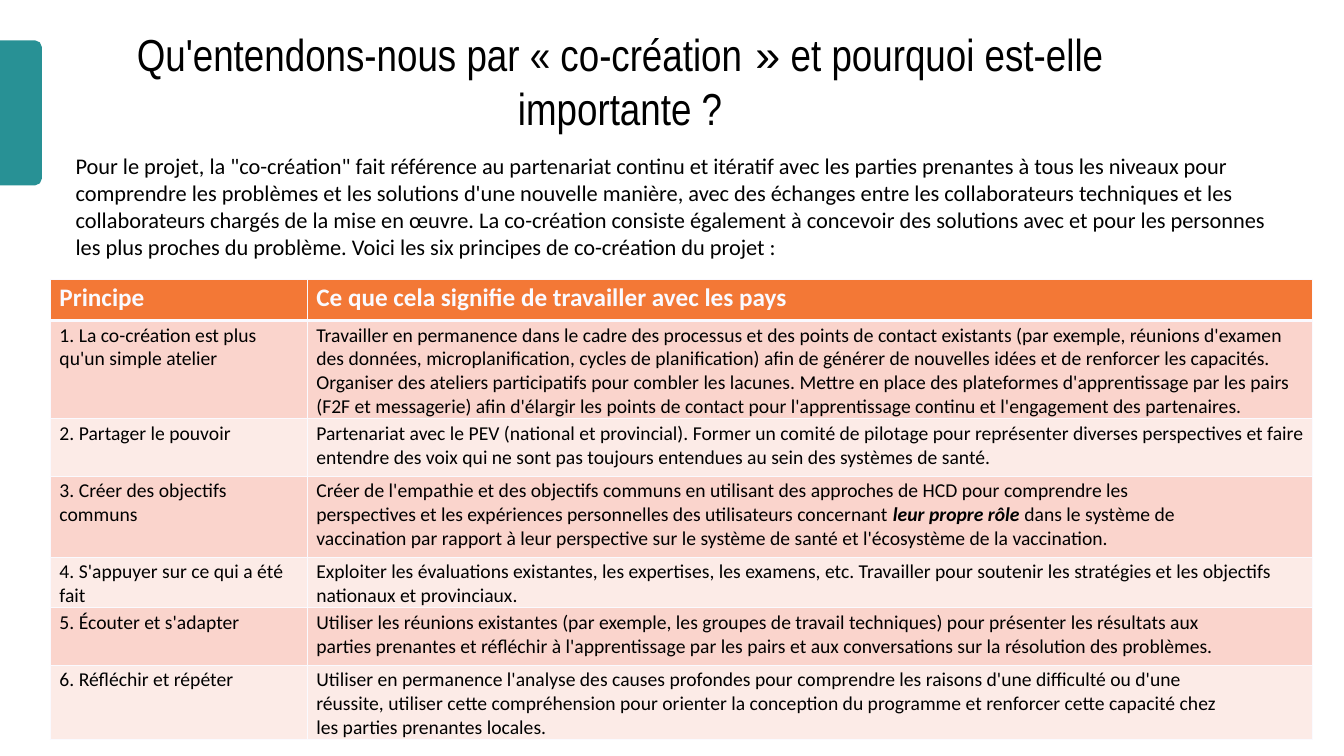
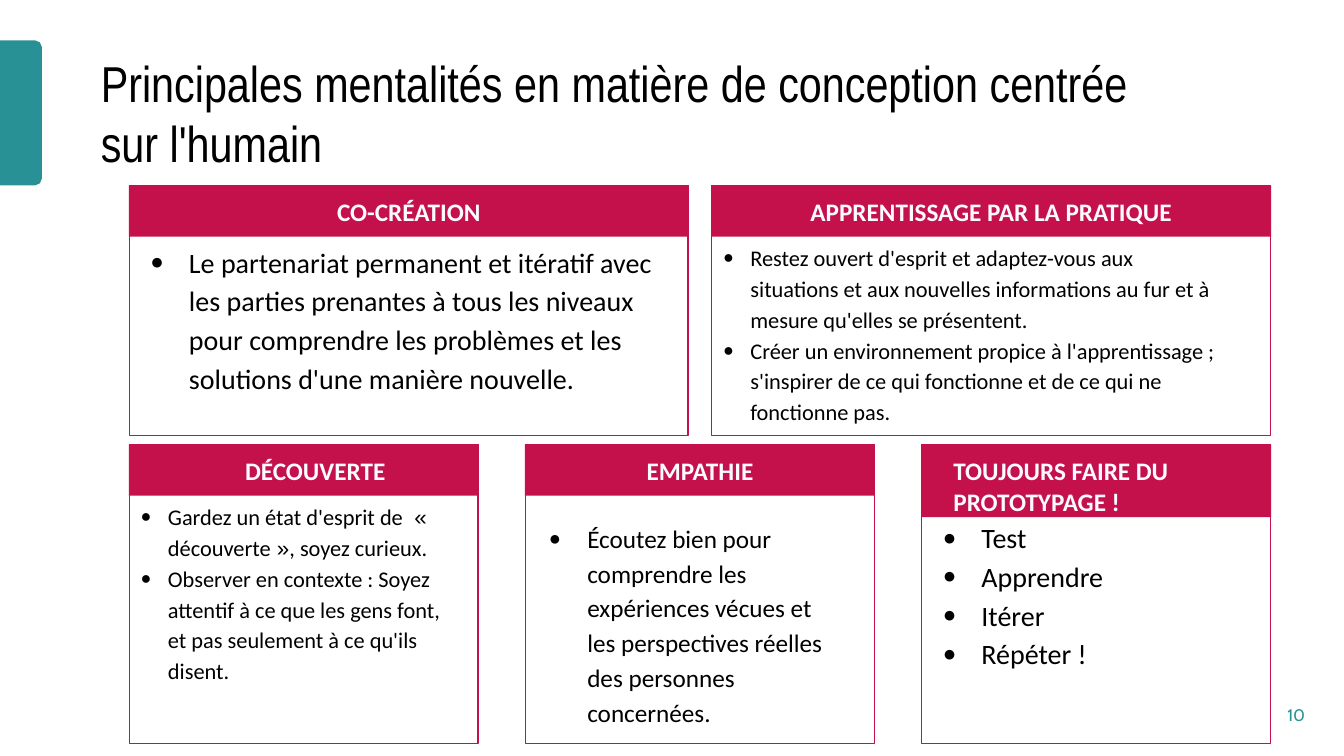
from copy import deepcopy

from lxml import etree
from pptx import Presentation
from pptx.dml.color import RGBColor
from pptx.enum import shapes, text
from pptx.oxml.ns import qn
from pptx.util import Pt

COLORS = {
    "ink": "000000",
    "paper": "FAFAFF",
    "teal": "289195",
    "crimson": "C4114C",
    "orange": "F37836",
    "rose": "FAD4CC",
    "blush": "FCEBE7",
}
LEFT, CENTER = text.PP_ALIGN.LEFT, text.PP_ALIGN.CENTER

PRINCIPLES = [
    ("1. La co-création est plus qu'un simple atelier",
     "Travailler en permanence dans le cadre des processus et des points de contact existants "
     "(par exemple, réunions d'examen des données, microplanification, cycles de planification) "
     "afin de générer de nouvelles idées et de renforcer les capacités. Organiser des ateliers "
     "participatifs pour combler les lacunes. Mettre en place des plateformes d'apprentissage par "
     "les pairs (F2F et messagerie) afin d'élargir les points de contact pour l'apprentissage "
     "continu et l'engagement des partenaires.", 58, 0),
    ("2. Partager le pouvoir",
     "Partenariat avec le PEV (national et provincial). Former un comité de pilotage pour "
     "représenter diverses perspectives et faire entendre des voix qui ne sont pas toujours "
     "entendues au sein des systèmes de santé.", 41, 0),
    ("3. Créer des objectifs communs",
     [("Créer de l'empathie et des objectifs communs en utilisant des approches de HCD pour "
       "comprendre les perspectives et les expériences personnelles des utilisateurs concernant ", {}),
      ("leur propre rôle ", {"bold": True, "italic": True}),
      ("dans le système de vaccination par rapport à leur perspective sur le système de santé et "
       "l'écosystème de la vaccination.", {})], 58, 57),
    ("4. S'appuyer sur ce qui a été fait",
     "Exploiter les évaluations existantes, les expertises, les examens, etc. Travailler pour "
     "soutenir les stratégies et les objectifs nationaux et provinciaux.", 30, 0),
    ("5. Écouter et s'adapter",
     "Utiliser les réunions existantes (par exemple, les groupes de travail techniques) pour "
     "présenter les résultats aux parties prenantes et réfléchir à l'apprentissage par les pairs "
     "et aux conversations sur la résolution des problèmes.", 41, 57),
    ("6. Réfléchir et répéter",
     "Utiliser en permanence l'analyse des causes profondes pour comprendre les raisons d'une "
     "difficulté ou d'une réussite, utiliser cette compréhension pour orienter la conception du "
     "programme et renforcer cette capacité chez les parties prenantes locales.", 41, 57),
]

SMALL_LIST = {"size": 16, "indent": 27.5, "hang": 19.5, "first": 1, "line": 1.15}
LARGE_LIST = {"size": 20, "indent": 42.5, "hang": 27.5, "first": 1, "line": 1.15}

MINDSETS = [
    [
        {"name": "CO-CRÉATION", "right": 10, "format": LARGE_LIST,
         "points": ["Le partenariat permanent et itératif avec les parties prenantes à tous les "
                    "niveaux pour comprendre les problèmes et les solutions d'une manière nouvelle."]},
        {"name": "APPRENTISSAGE PAR LA PRATIQUE", "right": 38, "format": SMALL_LIST,
         "points": ["Restez ouvert d'esprit et adaptez-vous aux situations et aux nouvelles "
                    "informations au fur et à mesure qu'elles se présentent.",
                    "Créer un environnement propice à l'apprentissage ; s'inspirer de ce qui "
                    "fonctionne et de ce qui ne fonctionne pas."]},
    ],
    [
        {"name": "DÉCOUVERTE", "name_format": {"align": LEFT, "indent": 83},
         "right": 21, "format": SMALL_LIST,
         "points": [[("Gardez un état d'esprit de ", {}), (" « ", {"font": "Arial"}),
                     ("découverte", {}), (" »", {"font": "Arial"}), (", soyez curieux.", {})],
                    "Observer en contexte : Soyez attentif à ce que les gens font, et pas "
                    "seulement à ce qu'ils disent."]},
        {"name": "EMPATHIE", "right": 31, "list_at": (2, 52),
         "format": {**LARGE_LIST, "size": 18},
         "points": ["Écoutez bien pour comprendre les expériences vécues et les perspectives "
                    "réelles des personnes concernées."]},
        {"name": "TOUJOURS FAIRE DU PROTOTYPAGE !", "name_format": {"align": LEFT, "indent": 23},
         "band": 52, "right": 0, "list_at": (0.5, 50.5), "inset": 4,
         "format": {**LARGE_LIST, "line": 1, "first": 4.6, "before": 3.6},
         "points": ["Test", "Apprendre", "Itérer", "Répéter !"]},
    ],
]


def rgb(name):
    return RGBColor.from_string(COLORS[name])


def write(frame, paragraphs, size=16, font="Calibri", color="ink", bold=False, italic=False,
          align=LEFT, indent=0, hang=0, first=0, before=0, line=1, margins=(0, 1, 0, 0)):
    frame.word_wrap = True
    frame.auto_size = text.MSO_AUTO_SIZE.NONE
    frame.vertical_anchor = text.MSO_ANCHOR.TOP
    (frame.margin_left, frame.margin_top,
     frame.margin_right, frame.margin_bottom) = map(Pt, margins)
    fill_paragraphs(frame, paragraphs, size=size, font=font, color=color, bold=bold,
                    italic=italic, align=align, indent=indent, hang=hang, first=first,
                    before=before, line=line)


def fill_paragraphs(frame, paragraphs, align, indent, hang, first, before, line, **look):
    for number, content in enumerate(paragraphs):
        paragraph = frame.add_paragraph() if number else frame.paragraphs[0]
        paragraph.alignment = align
        paragraph.space_before = Pt(before if number else first)
        paragraph.space_after = Pt(0)
        paragraph.line_spacing = line
        props = paragraph._p.get_or_add_pPr()
        props.set("marL", str(Pt(indent)))
        props.set("indent", str(-Pt(hang)))
        if hang:
            etree.SubElement(props, qn("a:buSzPct")).set("val", "80000")
            etree.SubElement(props, qn("a:buChar")).set("char", "●")
        else:
            etree.SubElement(props, qn("a:buNone"))
        for words, changes in [(content, {})] if isinstance(content, str) else content:
            style = {**look, **changes}
            run = paragraph.add_run()
            run.text = words
            run.font.size = Pt(style["size"])
            run.font.name = style["font"]
            run.font.bold = style["bold"]
            run.font.italic = style["italic"]
            run.font.color.rgb = rgb(style["color"])


def place(shape, left, top, width, height):
    shape.left, shape.top, shape.width, shape.height = map(Pt, (left, top, width, height))
    return shape


def add_title(slide, content, top, size, **extra):
    title = place(slide.shapes.title, 54, top, 778, 45)
    write(title.text_frame, [content], size=size, font="Arial Narrow", first=1, **extra)


def add_master_tab(deck, slide, top=28.8, width=30, height=103.7):
    bottom = top + height
    outline = slide.shapes.build_freeform(0, Pt(top), scale=1.0)
    corners = [(width - 5, top), (width - 1.5, top + 1.5), (width, top + 5),
               (width, bottom - 5), (width - 1.5, bottom - 1.5), (width - 5, bottom), (0, bottom)]
    outline.add_line_segments([(Pt(x), Pt(y)) for x, y in corners], close=True)
    tab = outline.convert_to_shape()
    tab.shadow.inherit = False
    tab.fill.solid()
    tab.fill.fore_color.rgb = rgb("teal")
    tab.line.fill.background()
    tab.element.nvSpPr.cNvPr.set("id", "90")
    deck.slide_master.element.cSld.spTree.insert(2, tab.element)


def add_list_slots(layout, extra):
    source = next(p for p in layout.placeholders if p.placeholder_format.idx == 1)
    for number in range(extra):
        slot = deepcopy(source.element)
        slot.nvSpPr.cNvPr.set("id", str(50 + number))
        slot.nvSpPr.nvPr.find(qn("p:ph")).set("idx", str(20 + number))
        layout.element.cSld.spTree.append(slot)


def style_cell(cell, content, fill, bottom=1, top=1, right=0, **look):
    cell.fill.solid()
    cell.fill.fore_color.rgb = rgb(fill)
    cell.margin_left = cell.margin_bottom = 0
    cell.margin_top, cell.margin_right = Pt(2), Pt(right)
    cell.vertical_anchor = text.MSO_ANCHOR.TOP
    options = {"size": 14, "font": "Calibri", "color": "ink", "bold": False, "italic": False,
               "align": LEFT, "indent": 6.5, "hang": 0, "first": 2.4, "before": 0, "line": 1}
    fill_paragraphs(cell.text_frame, [content], **{**options, **look})
    props = cell._tc.get_or_add_tcPr()
    for position, (side, weight) in enumerate(zip("LRTB", (1, 1, top, bottom))):
        border = etree.Element(qn("a:ln" + side), w=str(Pt(weight)))
        paint = etree.SubElement(border, qn("a:solidFill"))
        etree.SubElement(paint, qn("a:srgbClr")).set("val", COLORS["paper"])
        props.insert(position, border)


def add_principles(slide, left, top, widths, header_height):
    heights = [header_height] + [row[2] for row in PRINCIPLES]
    table = slide.shapes.add_table(len(heights), 2, Pt(left), Pt(top),
                                   Pt(sum(widths)), Pt(sum(heights))).table
    for column, width in zip(table.columns, widths):
        column.width = Pt(width)
    for row, height in zip(table.rows, heights):
        row.height = Pt(height)
    for column, heading in enumerate(("Principe", "Ce que cela signifie de travailler avec les pays")):
        style_cell(table.cell(0, column), heading, "orange", bottom=3,
                   size=18, color="paper", bold=True)
    for number, (principle, meaning, _, right) in enumerate(PRINCIPLES, 1):
        fill = "rose" if number % 2 else "blush"
        top_weight = 3 if number == 1 else 1
        style_cell(table.cell(number, 0), principle, fill, top=top_weight, right=12)
        style_cell(table.cell(number, 1), meaning, fill, top=top_weight, right=right)


def add_box(slide, left, top, width, height, fill=None, line=None):
    box = slide.shapes.add_shape(shapes.MSO_SHAPE.RECTANGLE, *map(Pt, (left, top, width, height)))
    box.shadow.inherit = False
    if fill:
        box.fill.solid()
        box.fill.fore_color.rgb = rgb(fill)
    else:
        box.fill.background()
    if line:
        box.line.color.rgb = rgb(line)
        box.line.width = Pt(0.75)
    else:
        box.line.fill.background()
    return box


def add_card(slide, slot, mindset, left, top, width, height):
    add_box(slide, left + 0.5, top, width - 1, height, line="crimson")
    band = add_box(slide, left, top, width, mindset.get("band", 36.5), fill="crimson")
    write(band.text_frame, [mindset["name"]],
          **{"size": 18, "color": "paper", "bold": True, "align": CENTER,
             "margins": (0, 8, 0, 0), **mindset.get("name_format", {})})
    dx, dy = mindset.get("list_at", (0.5, 38))
    place(slot, left + dx, top + dy, width - 1, height - dy - 2)
    write(slot.text_frame, mindset["points"],
          margins=(0, mindset.get("inset", 1), mindset["right"], 0), **mindset["format"])


def add_card_row(slide, slots, mindsets, left, top, width, card_width, height):
    step = (width - card_width) / (len(mindsets) - 1)
    for number, (slot, mindset) in enumerate(zip(slots, mindsets)):
        add_card(slide, slot, mindset, left + number * step, top, card_width, height)


def build_principles_slide(deck):
    slide = deck.slides.add_slide(deck.slide_layouts[1])
    add_master_tab(deck, slide)
    add_title(slide, [("Qu'entendons-nous par « co-création", {}), (" »", {"font": "Arial"}),
                      (" et pourquoi est-elle importante ?", {})], 18, 32, align=CENTER)
    intro = place(slide.placeholders[1], 54, 108, 861, 84)
    write(intro.text_frame, [
        "Pour le projet, la \"co-création\" fait référence au partenariat continu et itératif avec "
        "les parties prenantes à tous les niveaux pour comprendre les problèmes et les solutions "
        "d'une nouvelle manière, avec des échanges entre les collaborateurs techniques et les "
        "collaborateurs chargés de la mise en œuvre. La co-création consiste également à concevoir "
        "des solutions avec et pour les personnes les plus proches du problème. Voici les six "
        "principes de co-création du projet :"], first=1)
    add_principles(slide, 36, 199.5, (183.5, 718), 29.5)


def build_mindsets_slide(deck):
    layout = deck.slide_layouts[3]
    add_list_slots(layout, 3)
    slide = deck.slides.add_slide(layout)
    add_title(slide, "Principales mentalités en matière de conception centrée sur l'humain",
              36, 36, indent=18)
    slots = [p for p in slide.placeholders if p.placeholder_format.idx]
    add_card_row(slide, slots[:2], MINDSETS[0], 92, 132.5, 816, 400, 178.5)
    add_card_row(slide, slots[2:], MINDSETS[1], 92, 317.5, 816, 250, 213.5)
    page = slide.shapes.add_textbox(*map(Pt, (919.5, 502.5, 16, 17)))
    write(page.text_frame, ["10"], size=12, font="Cabin", color="teal", first=1)


def main():
    deck = Presentation()
    deck.slide_width, deck.slide_height = Pt(960), Pt(540)
    build_principles_slide(deck)
    build_mindsets_slide(deck)
    deck.save("out.pptx")


if __name__ == "__main__":
    main()
